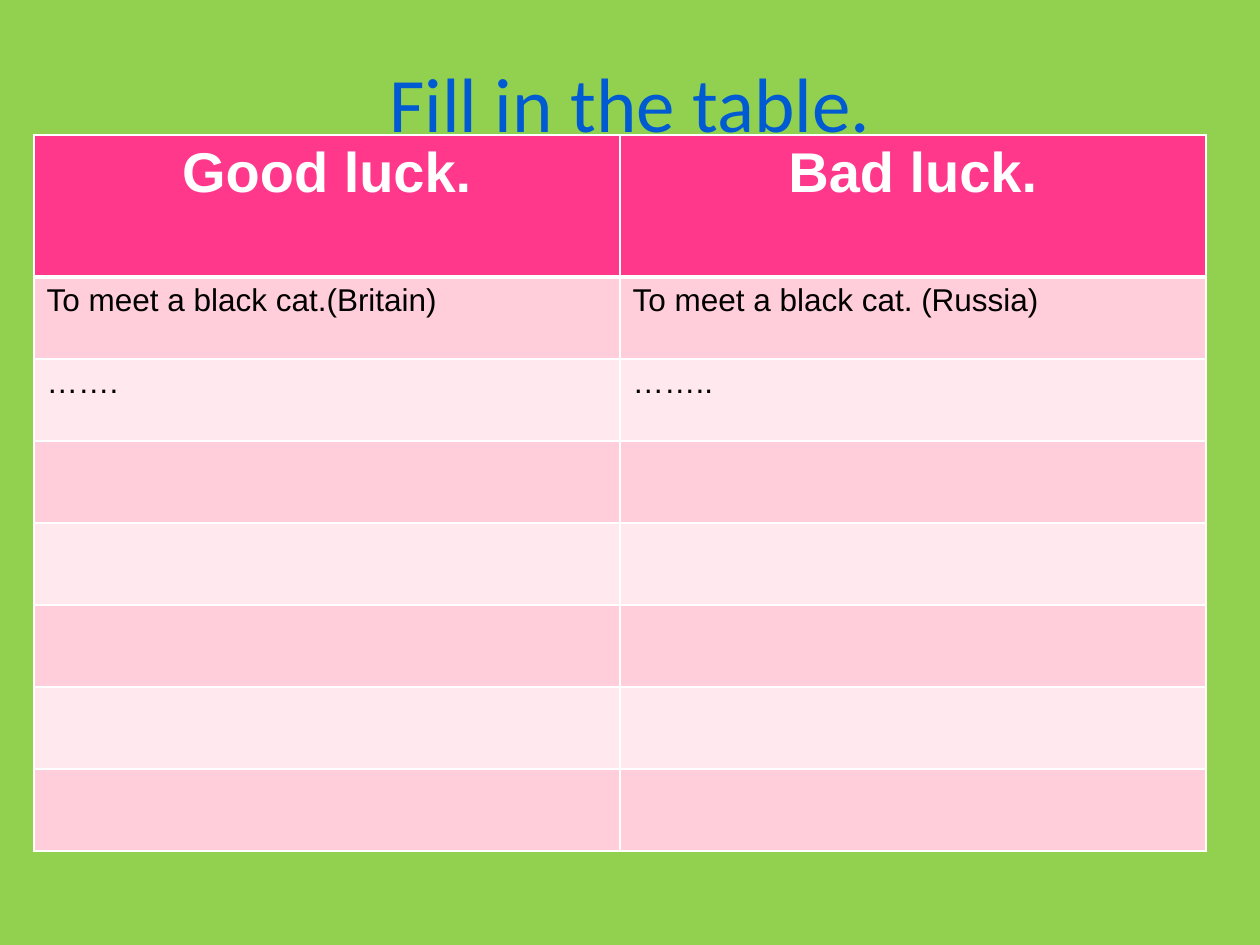
import pptx
import pptx.dml.color
import pptx.enum.text
import pptx.oxml
import pptx.oxml.ns
import pptx.util

RGB = pptx.dml.color.RGBColor
ALIGN = pptx.enum.text.PP_ALIGN
ANCHOR = pptx.enum.text.MSO_ANCHOR

GREEN = RGB(0x92, 0xD0, 0x50)
BLUE = RGB(0x00, 0x5B, 0xD3)
PINK = RGB(0xFF, 0x38, 0x8C)
ROSE = RGB(0xFF, 0xCE, 0xDA)
BLUSH = RGB(0xFF, 0xE8, 0xEE)
WHITE = RGB(0xFF, 0xFF, 0xFF)
BLACK = RGB(0x00, 0x00, 0x00)

TITLE = {"name": "Calibri", "size": pptx.util.Pt(44), "color": BLUE}
HEAD = {"name": "Arial", "size": pptx.util.Pt(32), "bold": True, "color": WHITE}
BODY = {"name": "Arial", "size": pptx.util.Pt(18), "bold": False, "color": BLACK}

ROWS = [
    ("Good luck.", "Bad luck."),
    ("To meet a black cat.(Britain)", "To meet a black cat. (Russia)"),
    ("…….", "…….."),
] + [("", "")] * 5
HEAD_H, ROW_H, COL_W = 142, 82, 586


def px(num):
    return pptx.util.Emu(round(num * 914400 / 126))


def write(frame, text, style, align):
    para = frame.paragraphs[0]
    para.text = text
    para.alignment = align
    for key, value in style.items():
        if key == "color":
            para.font.color.rgb = value
        else:
            setattr(para.font, key, value)
        for run in para.runs:
            if key == "color":
                run.font.color.rgb = value
            else:
                setattr(run.font, key, value)


def edge(cell, widths):
    """Draw white cell borders; widths maps each side to points."""
    props = cell._tc.get_or_add_tcPr()
    for side, width in widths.items():
        props.append(pptx.oxml.parse_xml(
            f'<a:ln{side} {pptx.oxml.ns.nsdecls("a")} w="{pptx.util.Pt(width)}">'
            f'<a:solidFill><a:srgbClr val="{WHITE}"/></a:solidFill></a:ln{side}>'))


def add_grid(slide):
    high = HEAD_H + ROW_H * (len(ROWS) - 1)
    grid = slide.shapes.add_table(
        len(ROWS), 2, px(34), px(135), px(2 * COL_W), px(high)).table
    for col in grid.columns:
        col.width = px(COL_W)
    for i, texts in enumerate(ROWS):
        grid.rows[i].height = px(ROW_H if i else HEAD_H)
        fill = (ROSE if i % 2 else BLUSH) if i else PINK
        style, align = (BODY, ALIGN.LEFT) if i else (HEAD, ALIGN.CENTER)
        for j, text in enumerate(texts):
            cell = grid.cell(i, j)
            edge(cell, {"L": 1, "R": 1, "T": 3 if i == 1 else 1, "B": 1 if i else 3})
            cell.fill.solid()
            cell.fill.fore_color.rgb = fill
            write(cell.text_frame, text, style, align)


def set_title(slide, text):
    title = slide.shapes.title
    place = {"left": 63, "top": 38, "width": 1134, "height": 127}
    for key, value in place.items():
        setattr(title, key, px(value))
    title.text_frame.vertical_anchor = ANCHOR.MIDDLE
    write(title.text_frame, text, TITLE, ALIGN.CENTER)
    # The title lies in front of the table.
    slide.shapes._spTree.append(title._element)


def main():
    deck = pptx.Presentation()
    deck.slide_width, deck.slide_height = px(1260), px(945)
    slide = deck.slides.add_slide(deck.slide_layouts[5])
    slide.background.fill.solid()
    slide.background.fill.fore_color.rgb = GREEN
    add_grid(slide)
    set_title(slide, "Fill in the table.")
    deck.save("out.pptx")


if __name__ == "__main__":
    main()
